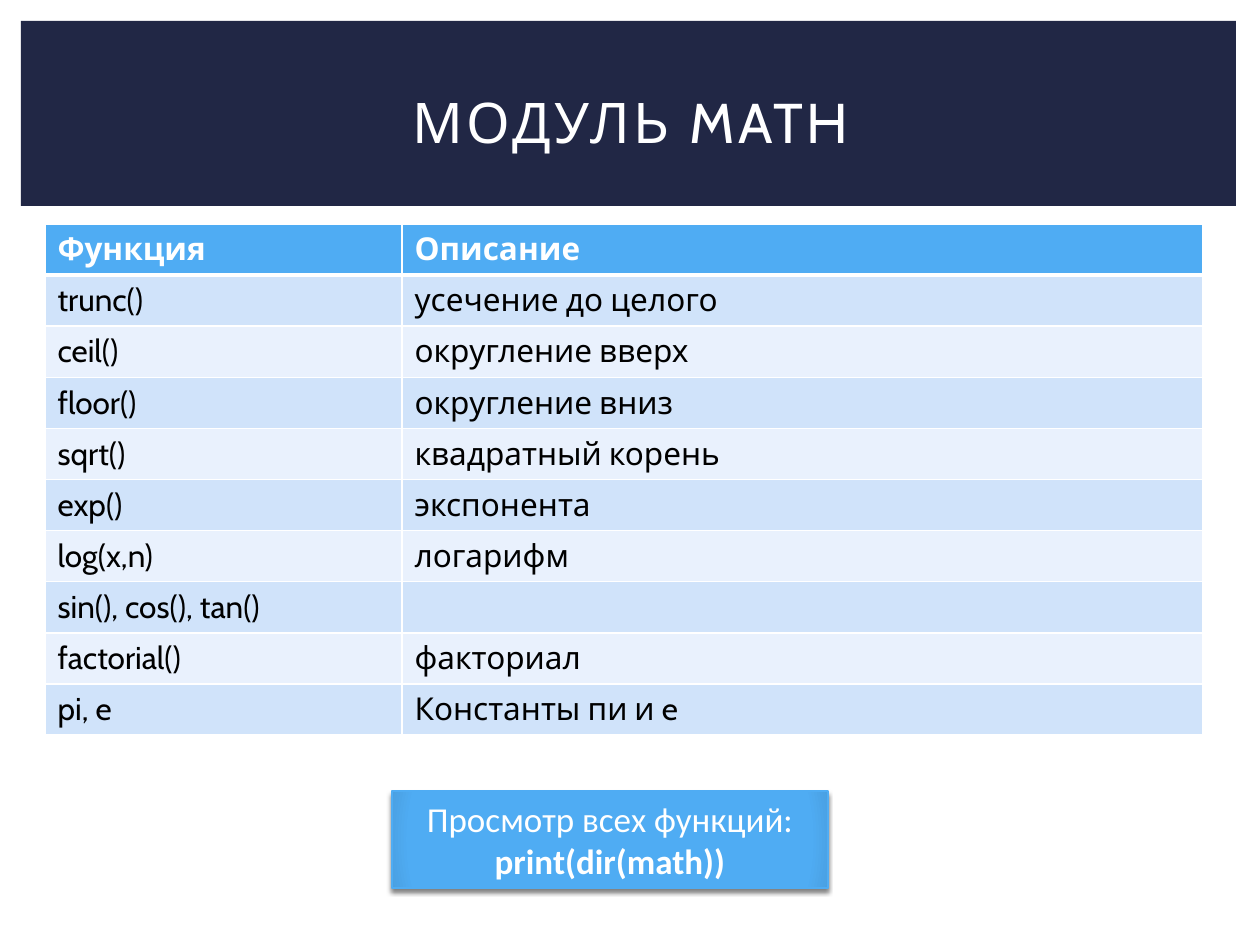
"""Build the slide that lists the functions of the math module."""
from lxml.etree import SubElement
from pptx import Presentation
from pptx.dml.color import RGBColor
from pptx.enum.shapes import MSO_SHAPE as Shape
from pptx.enum.text import MSO_ANCHOR as Anchor, PP_ALIGN as Align
from pptx.oxml import parse_xml
from pptx.oxml.ns import nsdecls, qn
from pptx.util import Emu, Pt

PX = 914400 / 126
NAVY = RGBColor(0x21, 0x27, 0x45)
BLUE = RGBColor(0x4F, 0xAC, 0xF3)
EDGE = RGBColor(0x4A, 0xA0, 0xE2)
BAND = RGBColor(0xD0, 0xE3, 0xFA)
PALE = RGBColor(0xE9, 0xF1, 0xFD)
WHITE = RGBColor(0xFF, 0xFF, 0xFF)
BLACK = RGBColor(0x00, 0x00, 0x00)

ROWS = [
    ("Функция", "Описание"),
    ("trunc()", "усечение до целого"),
    ("ceil()", "округление вверх"),
    ("floor()", "округление вниз"),
    ("sqrt()", "квадратный корень"),
    ("exp()", "экспонента"),
    ("log(x,n)", "логарифм"),
    ("sin(), cos(), tan()", ""),
    ("factorial()", "факториал"),
    ("pi, e", "Константы пи и e"),
]


def px(*lengths):
    return [Emu(round(length * PX)) for length in lengths]


class Painter:
    def __init__(self, page, font="Cabin"):
        self.page = page
        self.font = font

    def span(self, para, text, size, color, bold=False, font=None):
        span = para.add_run()
        span.text = text
        span.font.name = font or self.font
        span.font.size = Pt(size)
        span.font.bold = bold
        span.font.color.rgb = color
        return span

    def title(self, text, *place):
        box = self.page.shapes.title
        box.left, box.top, box.width, box.height = px(*place)
        box.text_frame.vertical_anchor = Anchor.MIDDLE
        para = box.text_frame.paragraphs[0]
        para.alignment = Align.CENTER
        span = self.span(para, text, 32, WHITE)
        span.font._element.set("spc", "200")

    def rect(self, color, *place):
        box = self.page.shapes.add_shape(Shape.RECTANGLE, *px(*place))
        box.shadow.inherit = False
        box.fill.solid()
        box.fill.fore_color.rgb = color
        box.line.fill.background()
        return box

    def banner(self, *place):
        box = self.rect(NAVY, *place)
        self.page.shapes.title.element.addprevious(box.element)

    def border(self, cell, side, points):
        line = parse_xml(
            f'<a:{side} {nsdecls("a")} w="{Pt(points)}"><a:solidFill>'
            f'<a:srgbClr val="{WHITE}"/></a:solidFill></a:{side}>')
        cell.fill._xPr.find(qn("a:solidFill")).addprevious(line)

    def table(self, rows, left, top, widths, height):
        frame = self.page.shapes.add_table(
            len(rows), len(widths),
            *px(left, top, sum(widths), height * len(rows)))
        grid = frame.table
        for column, width in zip(grid.columns, px(*widths)):
            column.width = width
        for index, texts in enumerate(rows):
            grid.rows[index].height = px(height)[0]
            head = index == 0
            fill = BLUE if head else (PALE, BAND)[index % 2]
            for cell, text in zip(grid.rows[index].cells, texts):
                cell.fill.solid()
                cell.fill.fore_color.rgb = fill
                for side in ("lnL", "lnR", "lnT", "lnB"):
                    thick = (head and side == "lnB") or (index == 1 and side == "lnT")
                    self.border(cell, side, 3 if thick else 1)
                if text:
                    self.span(cell.text_frame.paragraphs[0], text, 18,
                              WHITE if head else BLACK, head)

    def callout(self, lines, *place):
        box = self.rect(BLUE, *place)
        box.line.color.rgb = BLUE
        box.line.width = Pt(0.79)
        stops = "".join(
            f'<a:gs pos="{spot * 1000}"><a:srgbClr val="{color}"/></a:gs>'
            for spot, color in ((0, BLUE), (90, BLUE), (100, EDGE)))
        gradient = parse_xml(
            f'<a:gradFill {nsdecls("a")}><a:gsLst>{stops}</a:gsLst>'
            '<a:path path="circle"><a:fillToRect l="100000" t="100000" '
            'r="100000" b="100000"/></a:path></a:gradFill>')
        style = box.element.spPr
        style.replace(style.find(qn("a:solidFill")), gradient)
        shadow = SubElement(
            style.find(qn("a:effectLst")), qn("a:outerShdw"),
            blurRad=str(Pt(2.5)), dist=str(Pt(2)), dir="5400000", rotWithShape="0")
        color = SubElement(shadow, qn("a:srgbClr"), val=str(BLACK))
        SubElement(color, qn("a:alpha"), val="50000")
        frame = box.text_frame
        frame.word_wrap = True
        frame.vertical_anchor = Anchor.MIDDLE
        for index, (text, bold) in enumerate(lines):
            para = frame.add_paragraph() if index else frame.paragraphs[0]
            para.alignment = Align.CENTER
            self.span(para, text, 20, WHITE, bold, "Calibri")


def main():
    deck = Presentation()
    deck.slide_width, deck.slide_height = px(1260, 945)
    painter = Painter(deck.slides.add_slide(deck.slide_layouts[5]))
    painter.banner(21, 21, 1215, 185)
    painter.title("МОДУЛЬ MATH", 53, 49, 1155, 145)
    painter.table(ROWS, 45, 224, (357, 801), 51)
    painter.callout([("Просмотр всех функций:", False), ("print(dir(math))", True)],
                    392, 791, 436, 97)
    deck.save("out.pptx")


if __name__ == "__main__":
    main()
